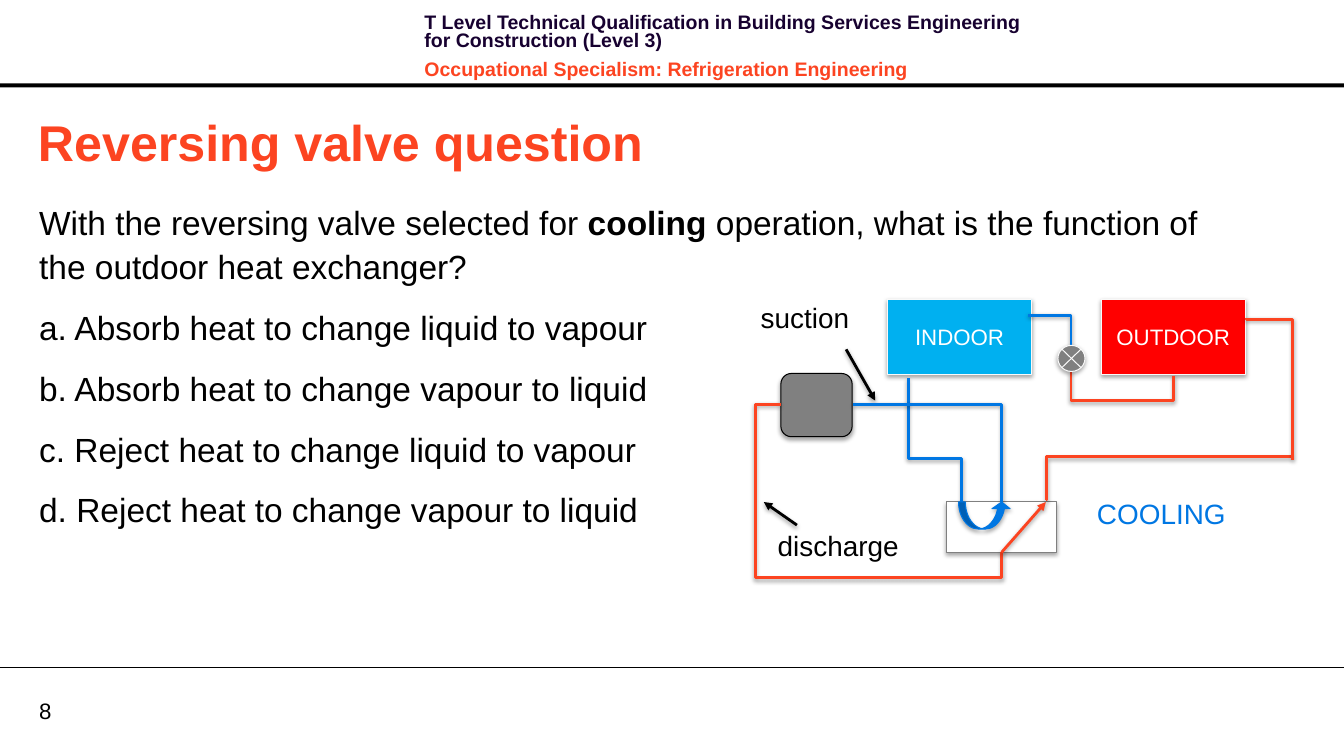
import pptx
import pptx.util
import pptx.dml.color
import pptx.enum.shapes
import pptx.enum.text
import pptx.oxml
import pptx.oxml.ns

# Content; all lengths are in grid cells of a tenth of an inch
CELL = 0.1
WIDE, HIGH = 133.9, 74.8
RED, BLUE, BLACK, WHITE, GREY = "FC4421", "0077E3", "000000", "FFFFFF", "808080"

COURSE = "T Level Technical Qualification in Building Services Engineering for Construction (Level 3)"
STRAND = "Occupational Specialism: Refrigeration Engineering"
TITLE = "Reversing valve question"
BODY = [  # words between stars are bold
    "With the reversing valve selected for *cooling* operation, "
    "what is the function of the outdoor heat exchanger?",
    "a. Absorb heat to change liquid to vapour",
    "b. Absorb heat to change vapour to liquid",
    "c. Reject heat to change liquid to vapour",
    "d. Reject heat to change vapour to liquid",
]
LABELS = [("suction", (74.8, 29.5, 10.9, 4.4)), ("discharge", (76.5, 52.2, 14.2, 4.4))]
POINTERS = [((79.4, 52.3), (76.1, 50)), ((84.3, 34.8), (87.2, 39.9))]
PARTS = [  # name, preset, frame, fill, line, text
    ("Indoor", "RECTANGLE", (88.4, 29.8, 14.4, 7.5), "00B0F0", "F9F9F9", "INDOOR"),
    ("Outdoor", "RECTANGLE", (109.7, 29.8, 14.4, 7.5), "FF0000", "F9F9F9", "OUTDOOR"),
    ("Valve", "RECTANGLE", (94.3, 50, 11, 5), WHITE, GREY, ""),
    ("Compressor", "FLOWCHART_ALTERNATE_PROCESS", (77.8, 37.2, 7.1, 6.3), GREY, BLACK, ""),
]
SYMBOLS = [
    ("Expansion", "FLOWCHART_SUMMING_JUNCTION", (105.4, 34.4, 2.7, 2.6), GREY, "F9F9F9", ""),
    ("Slide", "CURVED_UP_ARROW", (95.5, 50, 5.2, 2.7), BLUE, BLUE, ""),
]
PIPES = [  # start, end, spin, places where the pipe turns, colour
    ((77.8, 40.3), (99.8, 55), 180, (75.3, 57.5), RED),
    ((128.7, 45.5), (104.2, 49.8), 180, (104.3,), RED),
    ((90.5, 37.7), (95.8, 50), 270, (45.7,), BLUE),
    ((85, 40.3), (99.8, 50), 0, (), BLUE),
    ((124.2, 31.7), (128.8, 45.8), 270, (31.8,), RED),
    ((116.9, 37.4), (106.7, 37), 90, (39.9,), RED),
    ((106.7, 34.4), (102.4, 31.4), 270, (), BLUE),
]
TURN = {0: (1, 0), 90: (0, 1), 180: (-1, 0), 270: (0, -1)}  # cosine, sine

deck = pptx.Presentation()
size = lambda cells: pptx.util.Inches(cells * CELL)
deck.slide_width, deck.slide_height = size(WIDE), size(HIGH)
page = deck.slides.add_slide(deck.slide_layouts[6])
plan = page.shapes.add_group_shape().shapes


def hue(code):
    return pptx.dml.color.RGBColor.from_string(code)


def node(tag, inner="", **attrs):
    pairs = " ".join(f'{key}="{val}"' for key, val in attrs.items())
    return pptx.oxml.parse_xml(
        f'<a:{tag} {pptx.oxml.ns.nsdecls("a")} {pairs}>{inner}</a:{tag}>')


def shade(shape, alpha=None, dist=0):
    """Give a soft shadow straight below, or none at all."""
    inner = "" if alpha is None else (
        f'<a:outerShdw blurRad="40000" dist="{dist}" dir="5400000" rotWithShape="0">'
        f'<a:srgbClr val="{BLACK}"><a:alpha val="{alpha}000"/></a:srgbClr></a:outerShdw>')
    shape._element.spPr.append(node("effectLst", inner))


def write(shape, lines, points=24, color=BLACK, bold=False, align=None, middle=False,
          inset=None, wrap=True, space=None, before=0, after=0):
    frame = shape.text_frame
    frame.word_wrap = wrap
    anchor = pptx.enum.text.MSO_ANCHOR
    frame.vertical_anchor = anchor.MIDDLE if middle else anchor.TOP
    if inset is not None:
        frame.margin_left = frame.margin_right = size(inset)
        frame.margin_top = frame.margin_bottom = size(inset)
    colors = color if isinstance(color, list) else [color] * len(lines)
    for row, (line, tint) in enumerate(zip(lines, colors)):
        para = frame.add_paragraph() if row else frame.paragraphs[0]
        para.alignment, para.line_spacing = align, space
        para.space_before = pptx.util.Pt(before if row else 0)
        para.space_after = pptx.util.Pt(after)
        for turn, words in enumerate(line.split("*")):
            run = para.add_run()
            run.text = words
            run.font.name, run.font.size = "Arial", pptx.util.Pt(points)
            run.font.bold = bold or turn % 2 == 1
            run.font.color.rgb = hue(tint)


def label(home, lines, frame, **style):
    box = home.add_textbox(*map(size, frame))
    write(box, lines, **style)
    return box


def link(home, start, end, color, weight=2, kind="STRAIGHT", head=False):
    line = home.add_connector(getattr(pptx.enum.shapes.MSO_CONNECTOR, kind),
                              *map(size, start + end))
    line.line.color.rgb, line.line.width = hue(color), pptx.util.Pt(weight)
    if head:
        line._element.spPr.find(pptx.oxml.ns.qn("a:ln")).append(
            node("tailEnd", type="triangle"))
    return line


def part(preset, frame, fill, edge, text):
    shape = plan.add_shape(getattr(pptx.enum.shapes.MSO_SHAPE, preset), *map(size, frame))
    shape.fill.solid()
    shape.fill.fore_color.rgb = hue(fill)
    shape.line.color.rgb, shape.line.width = hue(edge), pptx.util.Pt(0.75)
    shade(shape, 35, 23000)
    if text:
        write(shape, [text], points=16, color=WHITE, middle=True,
              align=pptx.enum.text.PP_ALIGN.CENTER)
    return shape


def pipe(start, end, spin, bends, color):
    """Draw an elbow whose frame is turned by spin about its centre."""
    cos, sin = TURN[spin]
    span = [b - a for a, b in zip(start, end)]
    half = ((span[0] * cos + span[1] * sin) / 2, (span[1] * cos - span[0] * sin) / 2)
    mid = [(a + b) / 2 for a, b in zip(start, end)]
    line = link(plan, (mid[0] - half[0], mid[1] - half[1]),
                (mid[0] + half[0], mid[1] + half[1]), color, kind="ELBOW")
    props = line._element.spPr
    props.find(pptx.oxml.ns.qn("a:xfrm")).set("rot", str(spin * 60000))
    shape = props.find(pptx.oxml.ns.qn("a:prstGeom"))
    shape.set("prst", f"bentConnector{len(bends) + 2}")
    guides = shape.find(pptx.oxml.ns.qn("a:avLst"))
    for rank, place in enumerate(bends):
        axis = (rank + (sin != 0)) % 2
        ratio = round((place - start[axis]) / span[axis] * 100000)
        guides.append(node("gd", name=f"adj{rank + 1}", fmla=f"val {ratio}"))
    shade(line, 38, 20000)


# Header, footer and rules
bar = page.shapes.add_shape(pptx.enum.shapes.MSO_SHAPE.RECTANGLE,
                            *map(size, (0, 8.3, WIDE, 0.4)))
bar.fill.solid()
bar.fill.fore_color.rgb = hue(BLACK)
bar.line.fill.background()
bar.shadow.inherit = False
label(page.shapes, [COURSE, STRAND], (41.3, 1, 63, 6.4), points=14, bold=True,
      color=["170130", RED], space=pptx.util.Pt(13.1), before=4, after=4)
label(page.shapes, ["8"], (3.9, 69.4, 6.4, 2.7), points=16, middle=True, inset=0)
shade(link(page.shapes, (0, 66.5), (WIDE, 66.5), BLACK, weight=0.75))

# Title and question
label(page.shapes, [TITLE], (2.8, 10.5, 127.2, 7.1), points=36, color=RED,
      bold=True, middle=True)
label(page.shapes, BODY, (3.9, 19.7, 120.8, 39.6), inset=0, space=1.1, after=12)

# Circuit diagram
for text, frame in LABELS:
    label(plan, [text], frame, points=20, wrap=False)
for start, end in POINTERS:
    shade(link(plan, start, end, BLACK, head=True), 38, 20000)
parts = {name: part(*rest) for name, *rest in PARTS}
for route in PIPES:
    pipe(*route)
parts.update({name: part(*rest) for name, *rest in SYMBOLS})
for rank, ratio in enumerate((0.25, 0.67, 0.25)):
    parts["Slide"].adjustments[rank] = ratio
flow = link(plan, (99.8, 55), (104.2, 50), RED, head=True)
flow.begin_connect(parts["Valve"], 2)
shade(flow, 38, 20000)
mode = label(plan, ["COOLING"], (108.3, 49, 14.9, 4.4), points=20, color=BLUE, wrap=False)
mode.fill.solid()
mode.fill.fore_color.rgb = hue(WHITE)

deck.save("out.pptx")
